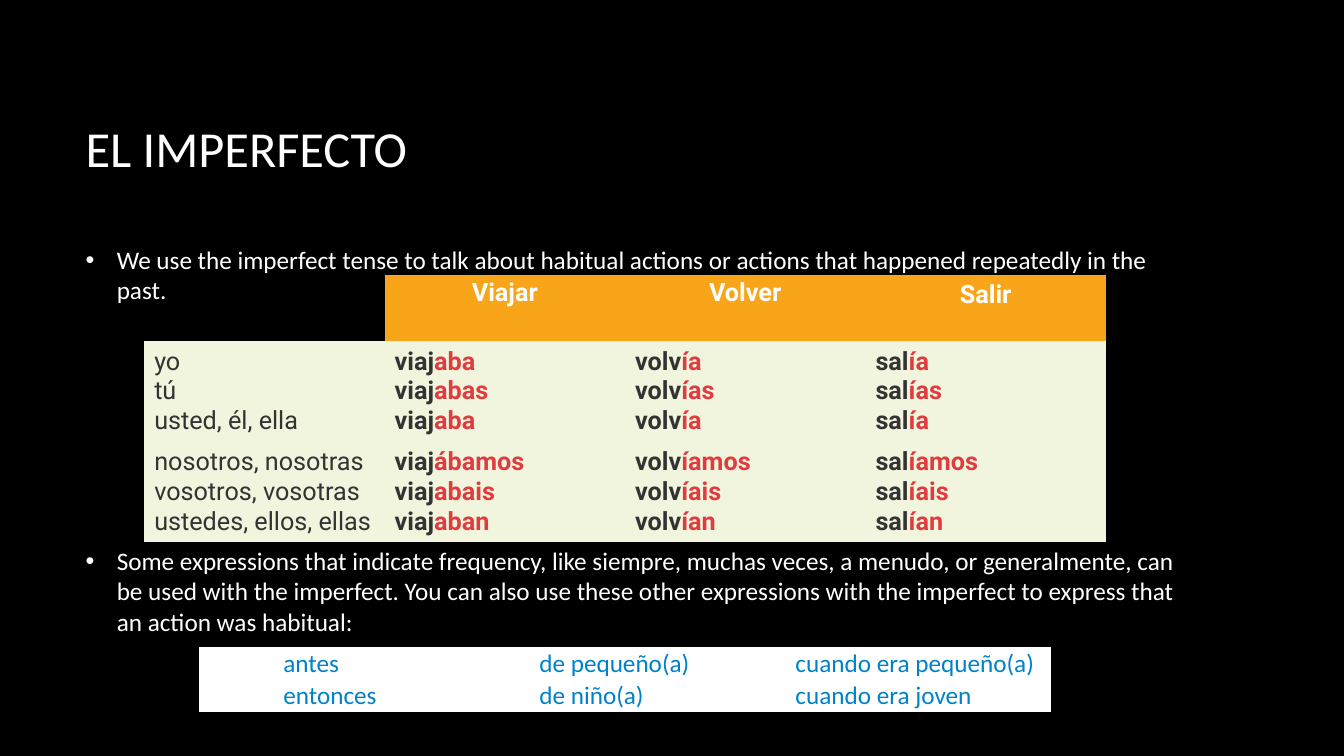
from lxml.etree import SubElement
from pptx import Presentation
from pptx.dml.color import RGBColor
from pptx.enum.text import MSO_ANCHOR, PP_ALIGN
from pptx.oxml.ns import qn
from pptx.util import Inches, Pt

WHITE, BLACK, ORANGE, CREAM = "FFFFFF", "000000", "F9A51A", "F1F5DD"
DARK, RED, BLUE = "333333", "E03C3F", "0082C9"
PLAIN_TABLE = "{2D5ABB26-0587-4C30-8999-92F81FD0307C}"

PRONOUNS = [["yo", "tú", "usted, él, ella"],
            ["nosotros, nosotras", "vosotros, vosotras", "ustedes, ellos, ellas"]]
ER_IR_ENDINGS = [["ía", "ías", "ía"], ["íamos", "íais", "ían"]]
VERBS = [("Viajar", "viaj", [["aba", "abas", "aba"], ["ábamos", "abais", "aban"]]),
         ("Volver", "volv", ER_IR_ENDINGS),
         ("Salir", "sal", ER_IR_ENDINGS)]
EXPRESSIONS = [["", "antes", "de pequeño(a)", "cuando era pequeño(a)"],
               ["", "entonces", "de niño(a)", "cuando era joven"]]
USE = ("We use the imperfect tense to talk about habitual actions or actions "
       "that happened repeatedly in the past.")
FREQUENCY = ("Some expressions that indicate frequency, like siempre, muchas veces, a menudo, "
             "or generalmente, can be used with the imperfect. You can also use these other "
             "expressions with the imperfect to express that an action was habitual:")


def color(value):
    return RGBColor.from_string(value)


class SlideWriter:
    text_font = "Calibri"
    table_font = "Roboto"
    text_size = 18

    def __init__(self, deck):
        self.page = deck.slides.add_slide(deck.slide_layouts[6])
        background = self.page.background.fill
        background.solid()
        background.fore_color.rgb = color(BLACK)

    def style(self, para, name, size, ink=None, bold=False):
        para.font.name = name
        para.font.size = Pt(size)
        para.font.bold = bold
        if ink:
            para.font.color.rgb = color(ink)

    def text(self, left, top, width, height, words, size=text_size, bullet=False):
        box = self.page.shapes.add_textbox(*map(Inches, (left, top, width, height)))
        frame = box.text_frame
        frame.word_wrap = True
        frame.vertical_anchor = MSO_ANCHOR.MIDDLE
        para = frame.paragraphs[0]
        para.text = words
        if bullet:
            properties = para._p.get_or_add_pPr()
            properties.set("marL", str(Inches(0.31)))
            properties.set("indent", str(-Inches(0.31)))
            SubElement(properties, qn("a:buFont")).set("typeface", "Arial")
            SubElement(properties, qn("a:buChar")).set("char", "•")
            para.space_after = Pt(10)
        self.style(para, self.text_font, size, WHITE)

    def table(self, left, top, widths, heights):
        frame = self.page.shapes.add_table(
            len(heights), len(widths), Inches(left), Inches(top),
            Inches(sum(widths)), Inches(sum(heights)))
        table = frame.table
        table.first_row = table.horz_banding = False
        table._tbl.tblPr.find(qn("a:tableStyleId")).text = PLAIN_TABLE
        for column, width in zip(table.columns, widths):
            column.width = Inches(width)
        for row, height in zip(table.rows, heights):
            row.height = Inches(height)
        return table

    def cell(self, cell, lines, name, fill, side=0.1, edge=0.05, bold=False,
             align=PP_ALIGN.LEFT, anchor=MSO_ANCHOR.MIDDLE):
        cell.margin_left = cell.margin_right = Inches(side)
        cell.margin_top = cell.margin_bottom = Inches(edge)
        cell.vertical_anchor = anchor
        if fill:
            cell.fill.solid()
            cell.fill.fore_color.rgb = color(fill)
        else:
            cell.fill.background()
        frame = cell.text_frame
        for index, pieces in enumerate(lines):
            para = frame.add_paragraph() if index else frame.paragraphs[0]
            para.alignment = align
            self.style(para, name, self.text_size, bold=bold)
            for words, ink in pieces:
                span = para.add_run()
                span.text = words
                span.font.color.rgb = color(ink)

    def conjugation(self, left, top):
        table = self.table(left, top, [2.385] * 4, [0.65, 0.98, 0.98])
        self.cell(table.cell(0, 0), [[]], self.table_font, None)
        for row, pronouns in enumerate(PRONOUNS, 1):
            self.cell(table.cell(row, 0), [[(word, DARK)] for word in pronouns],
                      self.table_font, CREAM)
        for column, (verb, stem, groups) in enumerate(VERBS, 1):
            side, edge = (0.1, 0.05) if verb == "Salir" else (0.07, 0.03)
            self.cell(table.cell(0, column), [[(verb, WHITE)]], self.table_font, ORANGE,
                      side, edge, True, PP_ALIGN.CENTER, MSO_ANCHOR.TOP)
            for row, endings in enumerate(groups, 1):
                lines = [[(stem, DARK), (ending, RED)] for ending in endings]
                self.cell(table.cell(row, column), lines, self.table_font, CREAM, bold=True)

    def expressions(self, left, top):
        table = self.table(left, top, [0.83] + [2.54] * 3, [0.32] * 2)
        for row, phrases in enumerate(EXPRESSIONS):
            for column, phrase in enumerate(phrases):
                lines = [[(phrase, BLUE)] if phrase else []]
                self.cell(table.cell(row, column), lines, self.text_font, WHITE, 0.01, 0.01)


def main():
    deck = Presentation()
    deck.slide_width, deck.slide_height = Inches(13.33), Inches(7.5)
    writer = SlideWriter(deck)
    writer.text(0.75, 0.67, 11.08, 1.59, "EL IMPERFECTO", size=36)
    writer.text(0.75, 2.34, 11.08, 0.77, USE, bullet=True)
    writer.conjugation(1.43, 2.73)
    writer.text(0.75, 5.32, 11.08, 1.08, FREQUENCY, bullet=True)
    writer.expressions(1.97, 6.42)
    deck.save("out.pptx")


if __name__ == "__main__":
    main()
